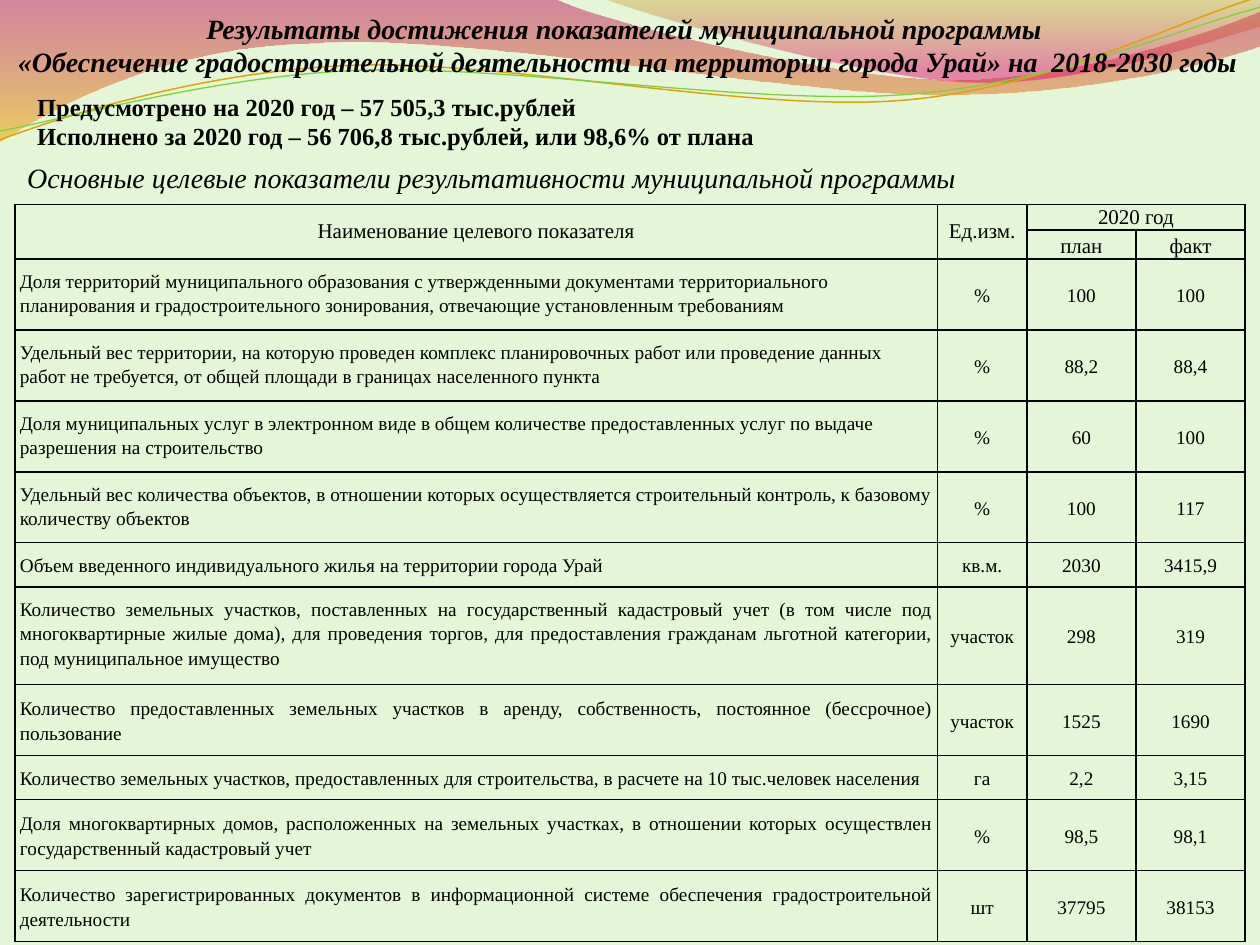
import pptx
import pptx.dml.color
import pptx.enum.text
import pptx.oxml
import pptx.oxml.ns
import pptx.util
from pptx.util import Cm

ALIGN = pptx.enum.text.PP_ALIGN
ANCHOR = pptx.enum.text.MSO_ANCHOR
FONT = "Times New Roman"
COLORS = {
    "background": "E5F6D8", "text": "000000", "border": "000000",
    "crimson": "BD0059", "amber": "F0AB00", "ochre": "C38B00",
    "pink": "E1006B", "gold": "E0A209", "green": "7FD13B",
}

# Outlines in cm: one point is a straight step, three points are a Bezier curve.
LEFT_WAVE = [
    [(0, 0)], [(11.18, -0.03)],
    [(12.09, 0.43), (16.87, 1.6), (19.25, 1.6)],
    [(21.67, 1.6), (24.33, 0.66), (25.4, 0.23)],
    [(25.43, 0.91)],
    [(24.97, 1.12), (22.1, 1.93), (18.95, 1.91)],
    [(15.8, 1.91), (9.7, 0.71), (6.53, 0.86)],
    [(3.28, 0.91), (1.17, 2.11), (-0.03, 2.87)],
]
RIGHT_WAVE = [
    [(12.17, -0.03)],
    [(12.93, 0.28), (17.32, 1.57), (19.53, 1.65)],
    [(21.74, 1.75), (24.41, 0.81), (25.4, 0.53)],
    [(25.4, 0)],
]
GOLD_THREAD = [
    [(0, 2.82)],
    [(1.22, 2.36), (4.01, 1.45), (7.04, 1.32)],
    [(10.03, 1.19), (15.06, 2.26), (18.11, 2.03)],
    [(21.16, 1.8), (23.83, 0.38), (25.35, -0.05)],
]
GREEN_THREAD = [
    [(0, 2.64)],
    [(1.19, 2.44), (4.17, 1.55), (7.19, 1.42)],
    [(10.24, 1.3), (15.16, 2.13), (18.21, 1.91)],
    [(21.23, 1.7), (23.9, 0.53), (25.4, 0.15)],
]

TITLE = [
    "Результаты достижения показателей муниципальной программы ",
    "«Обеспечение градостроительной деятельности на территории города Урай» на  2018-2030 годы",
]
BUDGET = [
    "Предусмотрено на 2020 год – 57 505,3 тыс.рублей",
    "Исполнено за 2020 год – 56 706,8 тыс.рублей, или 98,6% от плана",
]
SUBTITLE = ["Основные целевые показатели результативности муниципальной программы"]

# Indicator, unit, plan, fact, alignment, anchor, row height in cm
INDICATORS = [
    ("Доля территорий муниципального образования с утвержденными документами территориального планирования и градостроительного зонирования, отвечающие установленным требованиям",
     "%", "100", "100", ALIGN.LEFT, ANCHOR.TOP, 1.43),
    ("Удельный вес территории, на которую проведен комплекс планировочных работ или проведение данных работ не требуется, от общей площади в границах населенного пункта",
     "%", "88,2", "88,4", ALIGN.LEFT, ANCHOR.TOP, 1.43),
    ("Доля муниципальных услуг в электронном виде в общем количестве предоставленных услуг по выдаче разрешения на строительство",
     "%", "60", "100", ALIGN.LEFT, ANCHOR.TOP, 1.43),
    ("Удельный вес количества объектов, в отношении которых осуществляется строительный контроль, к базовому количеству объектов",
     "%", "100", "117", ALIGN.LEFT, ANCHOR.TOP, 1.43),
    ("Объем введенного индивидуального жилья на территории города Урай",
     "кв.м.", "2030", "3415,9", ALIGN.LEFT, ANCHOR.TOP, 0.89),
    ("Количество земельных участков, поставленных на государственный кадастровый учет (в том числе под многоквартирные жилые дома), для проведения торгов, для предоставления гражданам льготной категории, под муниципальное имущество ",
     "участок", "298", "319", ALIGN.JUSTIFY, ANCHOR.TOP, 1.97),
    ("Количество предоставленных земельных участков в аренду, собственность, постоянное (бессрочное) пользование",
     "участок", "1525", "1690", ALIGN.JUSTIFY, ANCHOR.MIDDLE, 1.43),
    ("Количество земельных участков, предоставленных для строительства, в расчете на 10 тыс.человек населения ",
     "га", "2,2", "3,15", ALIGN.JUSTIFY, ANCHOR.MIDDLE, 0.89),
    ("Доля многоквартирных домов, расположенных на земельных участках, в отношении которых осуществлен государственный кадастровый учет",
     "%", "98,5", "98,1", ALIGN.JUSTIFY, ANCHOR.MIDDLE, 1.43),
    ("Количество зарегистрированных документов в информационной системе обеспечения градостроительной деятельности",
     "шт", "37795", "38153", ALIGN.JUSTIFY, ANCHOR.MIDDLE, 1.43),
]
HEADER_HEIGHTS = [0.52, 0.58]
COLUMN_WIDTHS = [18.6, 1.8, 2.2, 2.2]


def rgb(name):
    return pptx.dml.color.RGBColor.from_string(COLORS[name])


def add_outline(slide, outline, close):
    """Draw the outline, joining each three-point step into one Bezier curve."""
    start, *others = [(Cm(x), Cm(y)) for segment in outline for x, y in segment]
    builder = slide.shapes.build_freeform(*start)
    builder.add_line_segments(others, close=close)
    shape = builder.convert_to_shape()
    shape.shadow.inherit = False
    steps = iter(list(shape._element.iter(pptx.oxml.ns.qn("a:lnTo"))))
    for segment in outline[1:]:
        parts = [next(steps) for _ in segment]
        if len(parts) == 3:
            curve = pptx.oxml.parse_xml(f'<a:cubicBezTo {pptx.oxml.ns.nsdecls("a")}/>')
            parts[0].addprevious(curve)
            for part in parts:
                curve.append(part[0])
                part.getparent().remove(part)
    return shape


def add_wave(slide, outline, stops):
    """Fill an outline from top to bottom; a stop is position, colour, opacity in %."""
    wave = add_outline(slide, outline, True)
    wave.line.fill.background()
    wave.fill.gradient()
    wave.fill.gradient_angle = 270
    for stop, (position, color, _) in zip(wave.fill.gradient_stops, stops):
        stop.position = position
        stop.color.rgb = rgb(color)
    tints = wave._element.spPr.iter(pptx.oxml.ns.qn("a:srgbClr"))
    for tint, (_, _, opacity) in zip(tints, stops):
        tint.append(pptx.oxml.parse_xml(
            f'<a:alpha {pptx.oxml.ns.nsdecls("a")} val="{opacity * 1000}"/>'))


def add_thread(slide, outline, color, width):
    thread = add_outline(slide, outline, False)
    thread.fill.background()
    thread.line.color.rgb = rgb(color)
    thread.line.width = pptx.util.Pt(width)


def write(frame, lines, size, align=ALIGN.LEFT, spacing=1.0, bold=False, italic=False):
    frame.word_wrap = True
    frame.text = "\n".join(lines)
    for paragraph in frame.paragraphs:
        paragraph.alignment = align
        paragraph.line_spacing = spacing
        paragraph.space_before = pptx.util.Pt(0)
        font = paragraph.font
        font.name, font.size = FONT, pptx.util.Pt(size)
        font.bold, font.italic = bold, italic
        font.color.rgb = rgb("text")


def place_title(slide):
    title = slide.shapes.title
    slide.shapes._spTree.append(title._element)  # in front of the waves
    title.left, title.top, title.width, title.height = Cm(-0.05), Cm(0.1), Cm(25.4), Cm(1.63)
    title.text_frame.auto_size = pptx.enum.text.MSO_AUTO_SIZE.NONE
    title.text_frame.vertical_anchor = ANCHOR.TOP
    write(title.text_frame, TITLE, 16, ALIGN.CENTER, bold=True, italic=True)


def add_text(slide, box, lines, size, **style):
    frame = slide.shapes.add_textbox(*map(Cm, box)).text_frame
    write(frame, lines, size, **style)


def fill_cell(cell, text, size, align=ALIGN.CENTER, anchor=ANCHOR.MIDDLE,
              spacing=1.15, side=0.1, edge=0.18):
    cell.margin_left = cell.margin_right = Cm(side)
    cell.margin_top = cell.margin_bottom = Cm(edge)
    cell.vertical_anchor = anchor
    write(cell.text_frame, [text], size, align, spacing)


def rule_cell(cell):
    """Leave the cell unfilled and draw its four borders."""
    cell.fill.background()
    properties = cell._tc.get_or_add_tcPr()
    for index, tag in enumerate(("lnL", "lnR", "lnT", "lnB")):
        properties.insert(index, pptx.oxml.parse_xml(
            f'<a:{tag} {pptx.oxml.ns.nsdecls("a")} w="12700"><a:solidFill>'
            f'<a:srgbClr val="{COLORS["border"]}"/></a:solidFill></a:{tag}>'))


def add_indicator_table(slide):
    heights = HEADER_HEIGHTS + [row[-1] for row in INDICATORS]
    table = slide.shapes.add_table(
        len(heights), len(COLUMN_WIDTHS), Cm(0.3), Cm(4.12),
        Cm(sum(COLUMN_WIDTHS)), Cm(sum(heights))).table
    table.first_row = table.horz_banding = False
    for column, width in zip(table.columns, COLUMN_WIDTHS):
        column.width = Cm(width)
    for row, height in zip(table.rows, heights):
        row.height = Cm(height)
    for cell in table.iter_cells():
        rule_cell(cell)
        fill_cell(cell, "", 11, edge=0)

    for column, heading in enumerate(("Наименование целевого показателя", "Ед.изм.", "2020 год")):
        fill_cell(table.cell(0, column), heading, 12, spacing=1.0, side=0.18, edge=0)
    for column, heading in enumerate(("план", "факт"), 2):
        fill_cell(table.cell(1, column), heading, 12, side=0.13, edge=0)
    for first, last in (((0, 0), (1, 0)), ((0, 1), (1, 1)), ((0, 2), (0, 3))):
        table.cell(*first).merge(table.cell(*last))

    for row, (indicator, *values, align, anchor, _) in enumerate(INDICATORS, len(HEADER_HEIGHTS)):
        fill_cell(table.cell(row, 0), indicator, 11, align, anchor)
        for column, value in enumerate(values, 1):
            fill_cell(table.cell(row, column), value, 11)


def main():
    deck = pptx.Presentation()
    deck.slide_width, deck.slide_height = Cm(25.4), Cm(19.05)
    slide = deck.slides.add_slide(deck.slide_layouts[5])
    slide.background.fill.solid()
    slide.background.fill.fore_color.rgb = rgb("background")
    add_wave(slide, LEFT_WAVE, [(0, "crimson", 45), (1, "amber", 55)])
    add_wave(slide, RIGHT_WAVE, [(0, "ochre", 30), (0.8, "pink", 45)])
    add_thread(slide, GOLD_THREAD, "gold", 0.85)
    add_thread(slide, GREEN_THREAD, "green", 0.75)
    place_title(slide)
    add_indicator_table(slide)
    add_text(slide, (0.5, 1.73, 16.2, 1.45), BUDGET, 14, bold=True)
    add_text(slide, (0.3, 3.12, 23.8, 0.94), SUBTITLE, 16, italic=True)
    deck.save("out.pptx")


if __name__ == "__main__":
    main()
